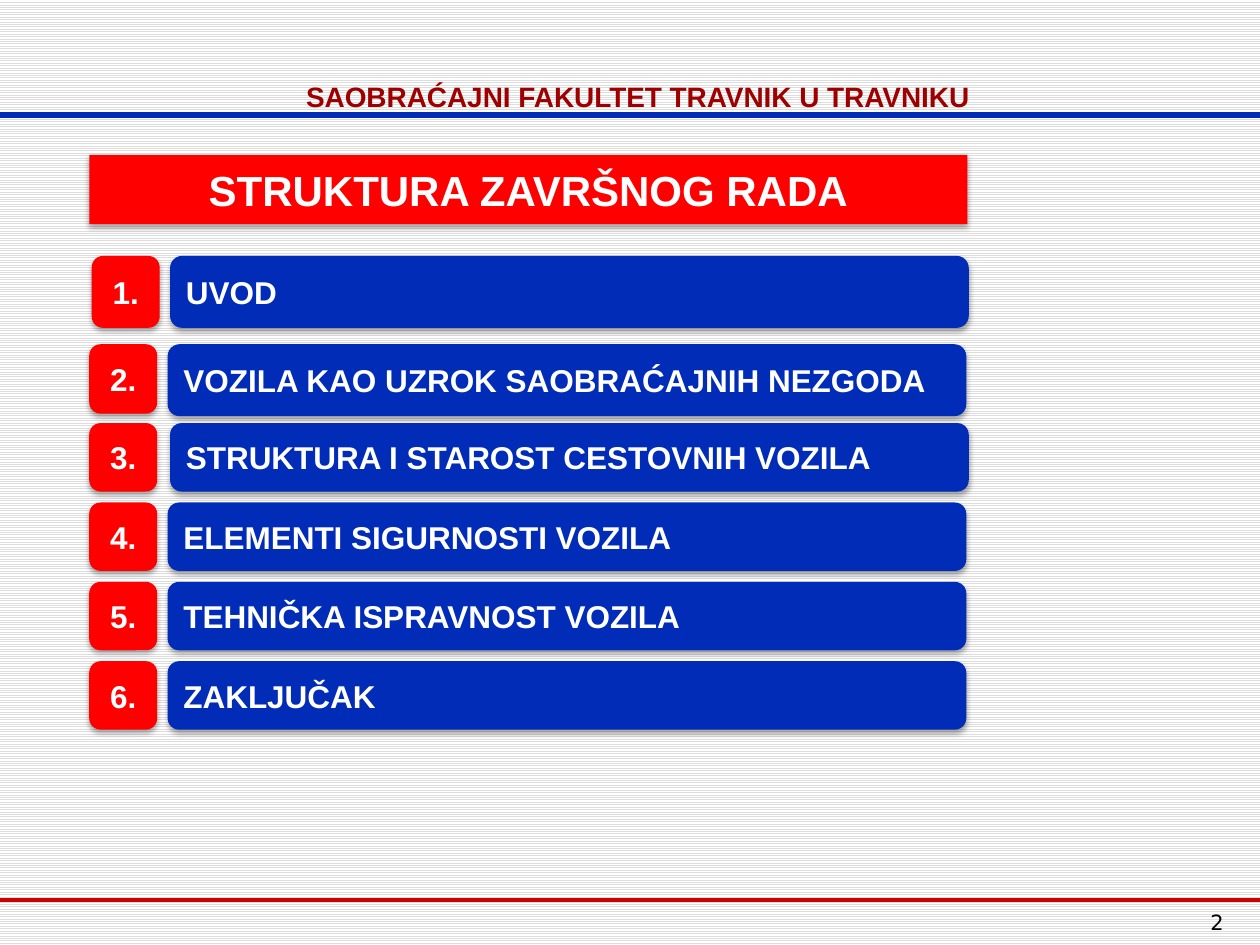
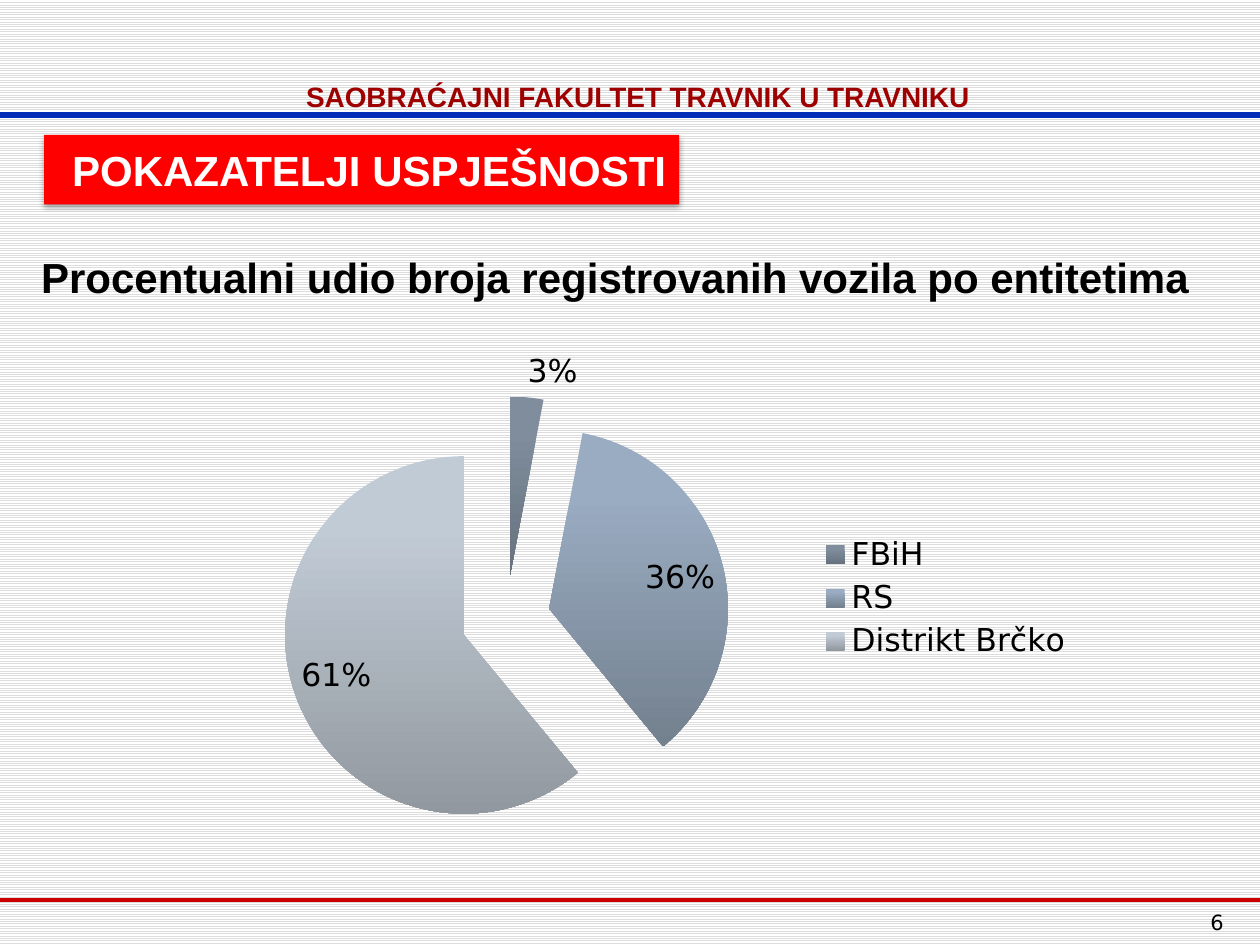
"""Builds two slides of a thesis defence: its structure and a pie of registered vehicles."""
from lxml import etree
from pptx import Presentation
from pptx.chart.data import CategoryChartData
from pptx.dml.color import RGBColor
from pptx.enum.chart import XL_CHART_TYPE, XL_LABEL_POSITION, XL_LEGEND_POSITION
from pptx.enum.dml import MSO_PATTERN
from pptx.enum.shapes import MSO_CONNECTOR, MSO_SHAPE
from pptx.enum.text import MSO_ANCHOR, MSO_AUTO_SIZE, PP_ALIGN
from pptx.oxml import parse_xml
from pptx.oxml.ns import nsdecls, qn
from pptx.util import Cm, Pt

ROUNDED = MSO_SHAPE.FLOWCHART_ALTERNATE_PROCESS
STRAIGHT = MSO_CONNECTOR.STRAIGHT
MIDDLE, TOP = MSO_ANCHOR.MIDDLE, MSO_ANCHOR.TOP
LEFT, CENTER, RIGHT = PP_ALIGN.LEFT, PP_ALIGN.CENTER, PP_ALIGN.RIGHT
JUSTIFY = PP_ALIGN.JUSTIFY

COLORS = {name: RGBColor.from_string(value) for name, value in {
    "red": "FF0000", "blue": "002CB8", "rule": "CC0000", "header": "9E0000",
    "white": "FFFFFF", "black": "000000", "stripe": "DDDDDD",
}.items()}

FORMATS = {
    "header": {"name": "Arial", "size": Pt(16), "bold": True, "color": "header"},
    "banner": {"name": "Arial", "size": Pt(24), "bold": True, "color": "white"},
    "item": {"name": "Arial", "size": Pt(18), "bold": True, "color": "white"},
    "caption": {"name": "Arial", "size": Pt(24), "bold": True, "color": "black"},
    "number": {"name": "DejaVu Sans", "size": Pt(12), "bold": False, "color": "black"},
    "chart": {"name": "DejaVu Sans", "size": Pt(18), "bold": False, "color": "black"},
}

SHADOW = (f'<a:effectLst {nsdecls("a")}><a:outerShdw blurRad="40000" dist="23000" '
          'dir="5400000" rotWithShape="0"><a:srgbClr val="000000">'
          '<a:alpha val="35000"/></a:srgbClr></a:outerShdw></a:effectLst>')


def write(sp, text, style, align, anchor=TOP, wrap=True):
    """Fill a shape with one formatted paragraph."""
    tf = sp.text_frame
    tf.text = text
    tf.auto_size = MSO_AUTO_SIZE.NONE
    tf.word_wrap = wrap
    tf.vertical_anchor = anchor
    p = tf.paragraphs[0]
    p.alignment = align
    font = p.runs[0].font
    for key, value in FORMATS[style].items():
        if key == "color":
            font.color.rgb = COLORS[value]
        else:
            setattr(font, key, value)


def paint(sp, color):
    """Give a shape a plain fill, no outline and a soft shadow below."""
    sp.fill.solid()
    sp.fill.fore_color.rgb = COLORS[color]
    sp.line.fill.background()
    sp.shadow.inherit = False
    effects = sp._element.spPr.find(qn("a:effectLst"))
    effects.getparent().replace(effects, parse_xml(SHADOW))


prs = Presentation()
prs.slide_width, prs.slide_height = Cm(25.4), Cm(19.05)
fill = prs.slide_master.background.fill
fill.patterned()
fill.pattern = MSO_PATTERN.LIGHT_HORIZONTAL
fill.fore_color.rgb = COLORS["stripe"]
fill.back_color.rgb = COLORS["white"]

banners = [
    ("STRUKTURA ZAVRŠNOG RADA", (1.8, 3.12, 17.7, 1.4), CENTER, "2"),
    ("POKAZATELJI USPJEŠNOSTI", (0.89, 2.72, 12.8, 1.4), RIGHT, "6"),
]
for title, box, align, number in banners:
    s = prs.slides.add_slide(prs.slide_layouts[5])
    for y, color, width in ((18.14, "rule", 2.25), (2.32, "blue", 3)):
        line = s.shapes.add_connector(STRAIGHT, 0, Cm(y), prs.slide_width, Cm(y))
        line.line.color.rgb = COLORS[color]
        line.line.width = Pt(width)
        etree.SubElement(line._element.spPr, qn("a:effectLst"))
    header = s.shapes.add_textbox(Cm(5.92), Cm(1.47), Cm(15), Cm(0.94))
    write(header, "SAOBRAĆAJNI FAKULTET TRAVNIK U TRAVNIKU", "header", LEFT)
    footer = s.shapes.add_textbox(Cm(19.41), Cm(18.21), Cm(5.51), Cm(0.8))
    write(footer, number, "number", RIGHT)

    banner = s.shapes.title
    banner.left, banner.top, banner.width, banner.height = map(Cm, box)
    banner._element.spPr.append(parse_xml(
        f'<a:prstGeom {nsdecls("a")} prst="flowChartAlternateProcess"><a:avLst/></a:prstGeom>'))
    paint(banner, "red")
    write(banner, title, "banner", align, MIDDLE, wrap=False)

structure, indicators = prs.slides

chapters = [
    ("UVOD", 1.85, 3.43, 5.16, 1.45, 1.45),
    ("VOZILA KAO UZROK SAOBRAĆAJNIH NEZGODA", 1.8, 3.38, 6.94, 1.4, 1.45),
    ("STRUKTURA I STAROST CESTOVNIH VOZILA", 1.8, 3.43, 8.53, 1.38, 1.38),
]
for i, text in enumerate(("ELEMENTI SIGURNOSTI VOZILA", "TEHNIČKA ISPRAVNOST VOZILA",
                          "ZAKLJUČAK")):
    chapters.append((text, 1.8, 3.38, 10.13 + 1.6 * i, 1.38, 1.38))

for i, (text, number_x, text_x, y, number_h, text_h) in enumerate(chapters, 1):
    for label, x, w, h, color, align in (
            (f"{i}.", number_x, 1.37, number_h, "red", CENTER),
            (text, text_x, 16.1, text_h, "blue", JUSTIFY)):
        sp = structure.shapes.add_shape(ROUNDED, Cm(x), Cm(y), Cm(w), Cm(h))
        paint(sp, color)
        write(sp, label, "item", align, MIDDLE)

caption = indicators.shapes.add_textbox(Cm(0.58), Cm(4.95), Cm(24.8), Cm(1.27))
write(caption, "Procentualni udio broja registrovanih vozila po entitetima", "caption", LEFT)

data = CategoryChartData()
data.categories = ["FBiH", "RS", "Distrikt Brčko"]
data.add_series("Series 1", (3, 36, 61))
chart = indicators.shapes.add_chart(
    XL_CHART_TYPE.PIE, Cm(3.96), Cm(6.76), Cm(17.93), Cm(10.59), data).chart
chart.has_title = False
chart.font.name = FORMATS["chart"]["name"]
chart.font.size = FORMATS["chart"]["size"]
chart.font.color.rgb = COLORS["black"]
chart.has_legend = True
chart.legend.position = XL_LEGEND_POSITION.RIGHT
chart.legend.include_layout = False

plot = chart.plots[0]
plot.has_data_labels = True
labels = plot.data_labels
for key, value in {"show_percentage": True, "show_value": False, "number_format": "0%",
                   "number_format_is_linked": False,
                   "position": XL_LABEL_POSITION.BEST_FIT}.items():
    setattr(labels, key, value)

series = plot.series[0]
series._element.find(qn("c:tx")).addnext(
    parse_xml(f'<c:explosion {nsdecls("c")} val="25"/>'))
slices = [("7F8D9C", "66717D"), ("9AACC2", "73808E"), ("C1CBD6", "92989F")]
for i, shades in enumerate(slices):
    fill = series.points[i].format.fill
    fill.gradient()
    fill.gradient_angle = 270
    for stop, shade, position in zip(fill.gradient_stops, shades, (0.2, 1)):
        stop.color.rgb = RGBColor.from_string(shade)
        stop.position = position

prs.save("out.pptx")
